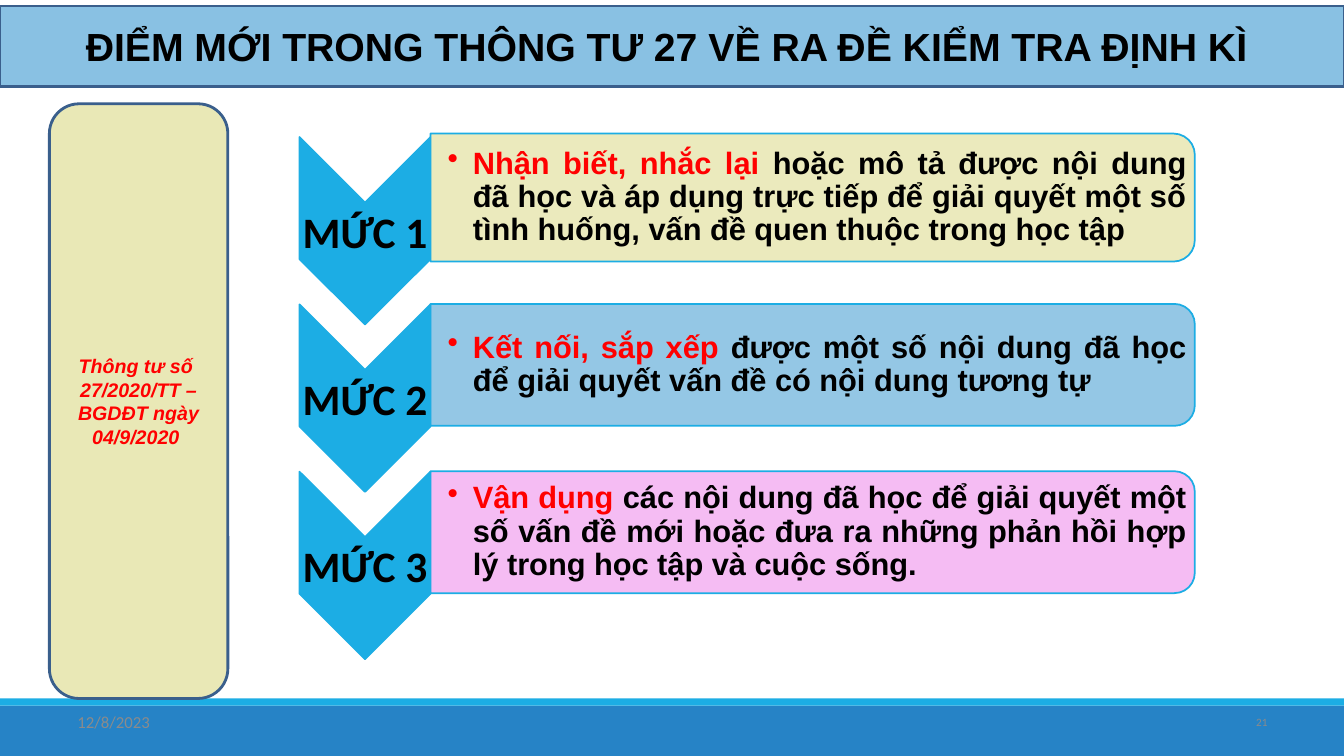
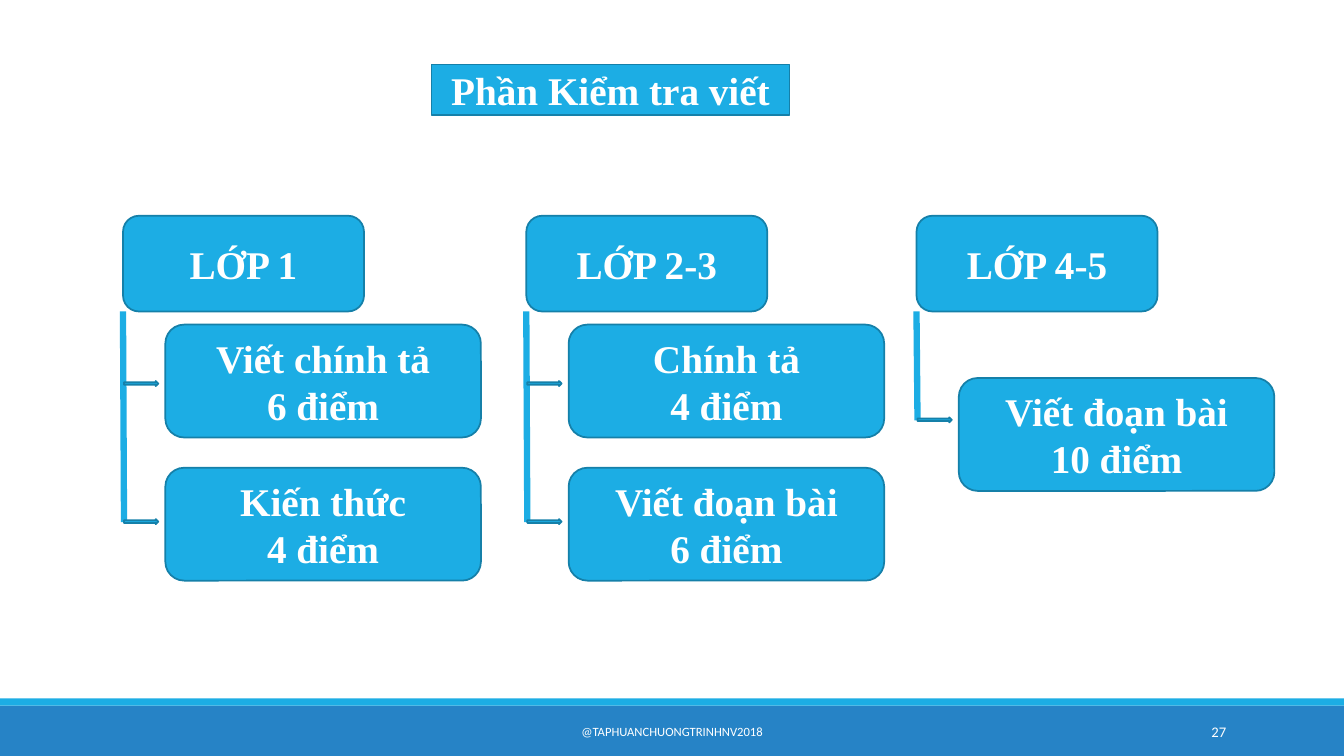
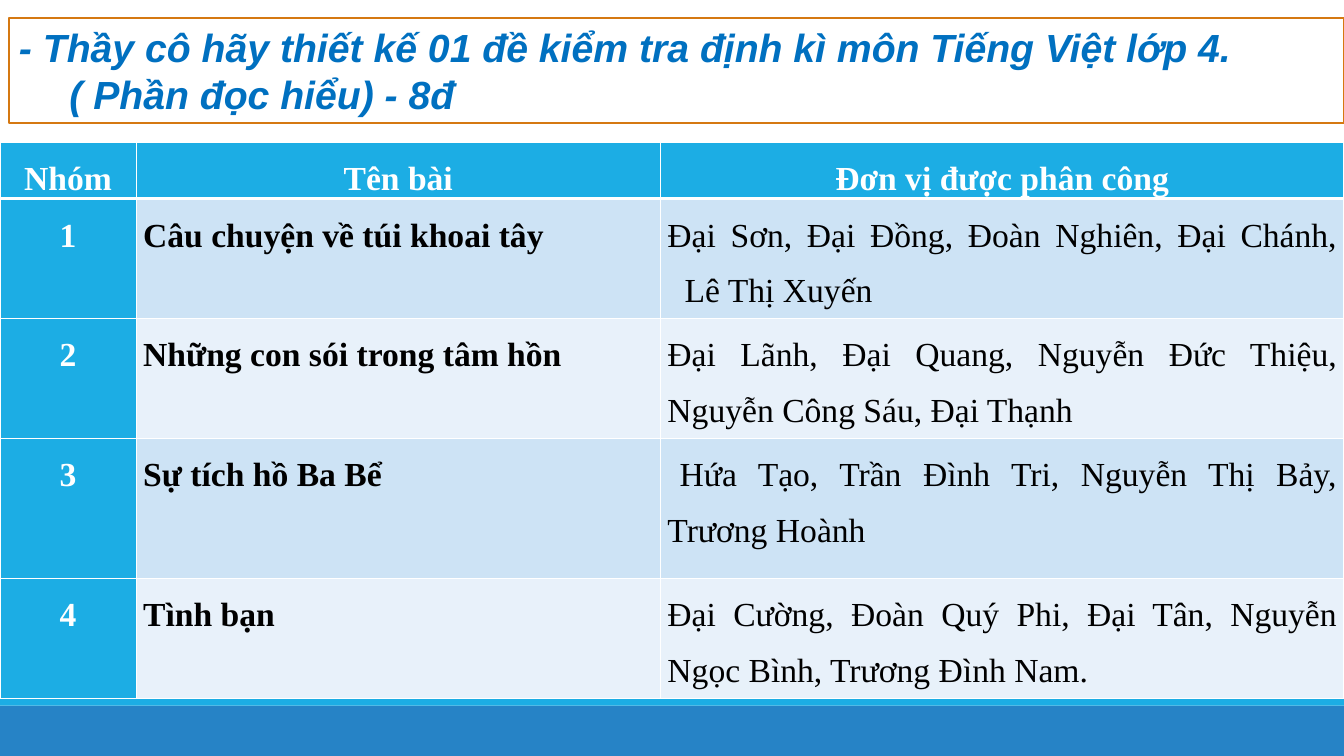
from dataclasses import dataclass
from typing import Optional

from lxml import etree
from pptx import Presentation
from pptx.dml.color import RGBColor
from pptx.enum.shapes import MSO_CONNECTOR, MSO_SHAPE
from pptx.enum.text import MSO_ANCHOR, PP_ALIGN
from pptx.oxml.ns import qn
from pptx.util import Inches, Pt

LEFT, CENTER, RIGHT, JUSTIFY = PP_ALIGN.LEFT, PP_ALIGN.CENTER, PP_ALIGN.RIGHT, PP_ALIGN.JUSTIFY
MIDDLE = MSO_ANCHOR.MIDDLE
RECT, ROUNDED = MSO_SHAPE.RECTANGLE, MSO_SHAPE.ROUNDED_RECTANGLE
CHEVRON, ROUND_TOP, ARROW = MSO_SHAPE.CHEVRON, MSO_SHAPE.ROUND_2_SAME_RECTANGLE, MSO_SHAPE.RIGHT_ARROW
STRAIGHT = MSO_CONNECTOR.STRAIGHT

COLORS = {
    "band": "2683C6", "accent": "1CADE4", "accent_edge": "1580A9", "navy": "3A5F8C",
    "sky": "89C1E3", "cream": "E9E8B6", "pink": "F5B5F2", "orange": "D57811",
    "blue": "0070C0", "red": "FF0000", "black": "000000", "white": "FFFFFF",
    "gray": "8B8B8B", "row_dark": "CDE3F5", "row_light": "E8F1FA",
}
SLIDE_W, SLIDE_H = 13.33, 7.5
DEFAULT_INSETS = (0.1, 0.05, 0.1, 0.05)
TIGHT_INSETS = (0.02, 0.02, 0.02, 0.02)


@dataclass(frozen=True)
class Box:
    left: float
    top: float
    width: float
    height: float

    def emu(self):
        return [Inches(v) for v in (self.left, self.top, self.width, self.height)]


@dataclass(frozen=True)
class Style:
    font: str
    size: float
    color: str
    bold: bool = False
    italic: bool = False
    align: PP_ALIGN = CENTER


@dataclass(frozen=True)
class Level:
    label: str
    key_words: str
    description: str
    fill: str
    height: float


@dataclass(frozen=True)
class Task:
    text: str
    top: float
    arrow_top: float


@dataclass(frozen=True)
class Grade:
    name: str
    left: float
    tasks: tuple[Task, ...]


@dataclass(frozen=True)
class Assignment:
    lesson: str
    units: str
    height: float
    margin: float = 0
    indent: float = 0


HEADLINE = Style("Arial", 28, "black", bold=True)
DECREE = Style("Arial", 14, "red", bold=True, italic=True)
LEVEL_LABEL = Style("Calibri", 31, "black", bold=True)
LEVEL_TEXT = Style("Arial", 22, "black", bold=True, align=JUSTIFY)
NODE = Style("Times New Roman", 28, "white", bold=True)
REQUEST = Style("Arial", 28, "blue", bold=True, italic=True, align=LEFT)
HEAD_CELL = Style("Times New Roman", 24, "white", bold=True)
LESSON_CELL = Style("Times New Roman", 24, "black", bold=True, align=JUSTIFY)
UNITS_CELL = Style("Times New Roman", 24, "black", align=JUSTIFY)

LEVELS = (
    Level("MỨC 1", "Nhận biết, nhắc lại ",
          "hoặc mô tả được nội dung đã học và áp dụng trực tiếp để giải quyết "
          "một số tình huống, vấn đề quen thuộc trong học tập", "cream", 1.27),
    Level("MỨC 2", "Kết nối, sắp xếp ",
          "được một số nội dung đã học để giải quyết vấn đề có nội dung tương tự", "sky", 1.21),
    Level("MỨC 3", "Vận dụng ",
          "các nội dung đã học để giải quyết một số vấn đề mới hoặc đưa ra "
          "những phản hồi hợp lý trong học tập và cuộc sống.", "pink", 1.21),
)
GRADES = (
    Grade("LỚP 1", 1.22, (Task("Viết chính tả\n6 điểm", 3.22, 3.78),
                          Task("Kiến thức\n4 điểm", 4.64, 5.15))),
    Grade("LỚP 2-3", 5.22, (Task("Chính tả\n4 điểm", 3.22, 3.78),
                            Task("Viết đoạn bài\n6 điểm", 4.64, 5.15))),
    Grade("LỚP 4-5", 9.09, (Task("Viết đoạn bài\n10 điểm", 3.75, 4.14),)),
)
TABLE_HEAD = ("Nhóm", "Tên bài", "Đơn vị được phân công")
COLUMN_WIDTHS = (1.35, 5.2, 6.78)
HEAD_HEIGHT = 0.56
ASSIGNMENTS = (
    Assignment("Câu chuyện về túi khoai tây",
               "Đại Sơn, Đại Đồng, Đoàn Nghiên, Đại Chánh,\vLê Thị Xuyến", 1.19, 0.17, -0.17),
    Assignment("Những con sói trong tâm hồn",
               "Đại Lãnh, Đại Quang, Nguyễn Đức Thiệu,\vNguyễn Công Sáu, Đại Thạnh", 1.19),
    Assignment("Sự tích hồ Ba Bể",
               "Hứa Tạo, Trần Đình Tri, Nguyễn Thị Bảy,\vTrương Hoành", 1.39, 0, 0.12),
    Assignment("Tình bạn",
               "Đại Cường, Đoàn Quý Phi, Đại Tân, Nguyễn Ngọc Bình, Trương Đình Nam.", 1.19),
)


def rgb(name: str) -> RGBColor:
    return RGBColor.from_string(COLORS[name])


def style_run(run, style: Style, color: Optional[str] = None) -> None:
    run.font.name, run.font.size = style.font, Pt(style.size)
    run.font.bold, run.font.italic = style.bold, style.italic
    run.font.color.rgb = rgb(color or style.color)


def write(frame, text: str, style: Style, insets=DEFAULT_INSETS) -> None:
    frame.text = text
    frame.word_wrap = True
    frame.vertical_anchor = MIDDLE
    (frame.margin_left, frame.margin_top,
     frame.margin_right, frame.margin_bottom) = map(Inches, insets)
    for paragraph in frame.paragraphs:
        paragraph.alignment = style.align
        for run in paragraph.runs:
            style_run(run, style)


def set_indent(paragraph, margin: float, indent: float) -> None:
    properties = paragraph._p.get_or_add_pPr()
    properties.set("marL", str(Inches(margin)))
    properties.set("indent", str(Inches(indent)))


def add_shape(slide, kind, box: Box, fill: Optional[str], line: Optional[str] = None,
              line_width: float = 1.25):
    shape = slide.shapes.add_shape(kind, *box.emu())
    shape.shadow.inherit = False
    if fill:
        shape.fill.solid()
        shape.fill.fore_color.rgb = rgb(fill)
    else:
        shape.fill.background()
    if line:
        shape.line.color.rgb = rgb(line)
        shape.line.width = Pt(line_width)
    else:
        shape.line.fill.background()
    return shape


def add_text(slide, box: Box, text: str, style: Style, insets=DEFAULT_INSETS):
    frame = slide.shapes.add_textbox(*box.emu()).text_frame
    write(frame, text, style, insets)
    return frame


def add_turned(slide, kind, box: Box, fill: str):
    """Draw a shape turned by 90 degrees that fills the given box once turned."""
    frame = Box(box.left + (box.width - box.height) / 2,
                box.top + (box.height - box.width) / 2, box.height, box.width)
    shape = add_shape(slide, kind, frame, fill, "accent")
    shape.rotation = 90
    return shape


def add_banded_slide(deck):
    slide = deck.slides.add_slide(deck.slide_layouts[6])
    add_shape(slide, RECT, Box(0, 7, SLIDE_W, 0.5), "band")
    add_shape(slide, RECT, Box(0, 6.93, SLIDE_W, 0.07), "accent")
    return slide


def add_level(slide, level: Level, offset: float) -> None:
    add_turned(slide, CHEVRON, Box(2.97, 1.64 - 0.28 + offset + 0, 1.3, 1.86), "accent")
    add_text(slide, Box(2.97, 2.01 + offset, 1.3, 0.56), level.label, LEVEL_LABEL, TIGHT_INSETS)

    middle = 1.96 + offset
    bar = add_turned(slide, ROUND_TOP,
                     Box(4.27, middle - level.height / 2, 7.58, level.height), level.fill)
    color = bar._element.spPr.find(qn("a:solidFill"))[0]
    etree.SubElement(color, qn("a:alpha")).set("val", "90000")

    text_height = level.height - 0.12
    frame = add_text(slide, Box(4.27, middle - text_height / 2, 7.52, text_height),
                     level.key_words, LEVEL_TEXT, (0.17, 0.02, 0.02, 0.02))
    paragraph = frame.paragraphs[0]
    style_run(paragraph.runs[0], LEVEL_TEXT, "red")
    description = paragraph.add_run()
    description.text = level.description
    style_run(description, LEVEL_TEXT)
    paragraph.line_spacing = 0.9
    set_indent(paragraph, 0.25, -0.25)
    bullet = etree.SubElement(paragraph._p.get_or_add_pPr(), qn("a:buChar"))
    bullet.set("char", "•")


def build_levels(deck) -> None:
    slide = add_banded_slide(deck)
    headline = add_shape(slide, RECT, Box(0, 0.06, SLIDE_W, 0.8), "sky", "navy", 2)
    write(headline.text_frame, "ĐIỂM MỚI TRONG THÔNG TƯ 27 VỀ RA ĐỀ KIỂM TRA ĐỊNH KÌ ", HEADLINE)
    for index, level in enumerate(LEVELS):
        add_level(slide, level, 1.66 * index)
    decree = add_shape(slide, ROUNDED, Box(0.49, 1.03, 1.77, 5.9), "cream", "navy", 2)
    write(decree.text_frame, "Thông tư số \n27/2020/TT –BGDĐT ngày 04/9/2020 ", DECREE,
          (0, 0.05, 0, 0.05))
    add_text(slide, Box(0.67, 6.96, 3, 0.4), "12/8/2023", Style("Calibri", 12, "gray", align=LEFT))
    add_text(slide, Box(11.67, 6.96, 1, 0.4), "21", Style("Calibri", 8, "gray", align=RIGHT))


def add_node(slide, kind, box: Box, text: str) -> None:
    node = add_shape(slide, kind, box, "accent", "accent_edge")
    write(node.text_frame, text, NODE)


def add_grade(slide, grade: Grade) -> None:
    left = grade.left
    add_node(slide, ROUNDED, Box(left, 2.14, 2.39, 0.95), grade.name)
    for task in grade.tasks:
        add_node(slide, ROUNDED, Box(left + 0.42, task.top, 3.13, 1.12), task.text)
    spine_end = grade.tasks[-1].arrow_top + 0.03
    spine = slide.shapes.add_connector(STRAIGHT, Inches(left), Inches(3.09),
                                       Inches(left + 0.01), Inches(spine_end))
    spine.line.color.rgb = rgb("accent")
    spine.line.width = Pt(4.5)
    etree.SubElement(spine._element.spPr, qn("a:effectLst"))
    for task in grade.tasks:
        add_shape(slide, ARROW, Box(left + 0.01, task.arrow_top, 0.34, 0.05),
                  "accent", "accent_edge")


def build_writing_test(deck) -> None:
    slide = add_banded_slide(deck)
    add_text(slide, Box(4.03, 7.06, 5.27, 0.4), "@TAPHUANCHUONGTRINHNV2018",
             Style("Calibri", 9, "white"))
    add_text(slide, Box(10.83, 7.06, 1.43, 0.4), "27", Style("Calibri", 10.5, "white", align=RIGHT))
    for grade in GRADES:
        add_grade(slide, grade)
    add_node(slide, RECT, Box(4.28, 0.64, 3.55, 0.5), "Phần Kiểm tra viết")


def set_borders(cell, bottom_width: float) -> None:
    properties = cell._tc.get_or_add_tcPr()
    widths = {"a:lnL": 1, "a:lnR": 1, "a:lnT": 1, "a:lnB": bottom_width}
    for position, (side, width) in enumerate(widths.items()):
        border = etree.Element(qn(side), w=str(Pt(width)))
        fill = etree.SubElement(border, qn("a:solidFill"))
        etree.SubElement(fill, qn("a:srgbClr")).set("val", COLORS["white"])
        properties.insert(position, border)


def fill_cell(cell, text: str, style: Style, fill: str, bottom_width: float = 1) -> None:
    write(cell.text_frame, text, style)
    cell.margin_left = cell.margin_right = Inches(0.07)
    cell.margin_top = cell.margin_bottom = 0
    cell.vertical_anchor = MSO_ANCHOR.TOP
    paragraph = cell.text_frame.paragraphs[0]
    paragraph.line_spacing = 1.5
    paragraph.space_after = Pt(8)
    cell.fill.solid()
    cell.fill.fore_color.rgb = rgb(fill)
    set_borders(cell, bottom_width)


def build_assignments(deck) -> None:
    slide = add_banded_slide(deck)
    heights = [HEAD_HEIGHT] + [assignment.height for assignment in ASSIGNMENTS]
    area = Box(0, 1.41, sum(COLUMN_WIDTHS), sum(heights))
    table = slide.shapes.add_table(len(heights), len(COLUMN_WIDTHS), *area.emu()).table
    for column, width in zip(table.columns, COLUMN_WIDTHS):
        column.width = Inches(width)
    for row, height in zip(table.rows, heights):
        row.height = Inches(height)
    for column, heading in enumerate(TABLE_HEAD):
        fill_cell(table.cell(0, column), heading, HEAD_CELL, "accent", bottom_width=3)
    for number, assignment in enumerate(ASSIGNMENTS, start=1):
        fill = "row_dark" if number % 2 else "row_light"
        fill_cell(table.cell(number, 0), str(number), HEAD_CELL, "accent")
        fill_cell(table.cell(number, 1), assignment.lesson, LESSON_CELL, fill)
        units = table.cell(number, 2)
        fill_cell(units, assignment.units, UNITS_CELL, fill)
        set_indent(units.text_frame.paragraphs[0], assignment.margin, assignment.indent)

    request = add_shape(slide, RECT, Box(0.09, 0.18, 13.24, 1.04), None, "orange", 1)
    write(request.text_frame,
          "- Thầy cô hãy thiết kế 01 đề kiểm tra định kì môn Tiếng Việt lớp 4.\v"
          "( Phần đọc hiểu) - 8đ", REQUEST)
    set_indent(request.text_frame.paragraphs[0], 0.5, -0.5)


def main() -> None:
    deck = Presentation()
    deck.slide_width, deck.slide_height = Inches(SLIDE_W), Inches(SLIDE_H)
    build_levels(deck)
    build_writing_test(deck)
    build_assignments(deck)
    deck.save("out.pptx")


if __name__ == "__main__":
    main()
